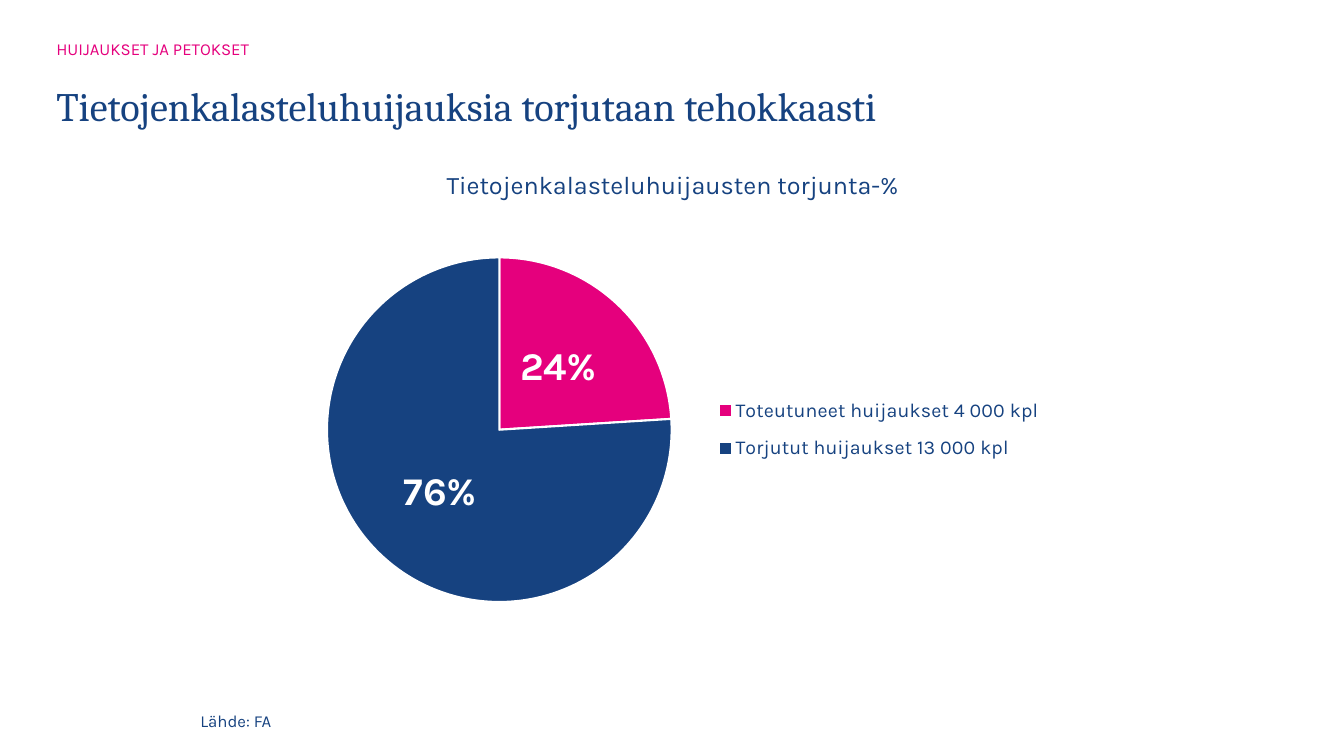
from dataclasses import dataclass
from typing import Any

from lxml.etree import SubElement
from pptx import Presentation
from pptx.chart.data import CategoryChartData
from pptx.dml.color import RGBColor
from pptx.enum.chart import XL_CHART_TYPE, XL_LABEL_POSITION, XL_LEGEND_POSITION
from pptx.enum.text import MSO_ANCHOR, PP_ALIGN
from pptx.oxml import parse_xml
from pptx.oxml.ns import nsdecls, qn
from pptx.util import Pt

COLOURS = {"navy": "164280", "pink": "E5007D", "grey": "575757", "white": "FFFFFF"}
BODY_FONT = "Karla"


@dataclass
class TextItem:
    text: str
    box: tuple[float, float, float, float]  # left, top, width, height
    size: float
    colour: str = "navy"
    font: str = BODY_FONT
    align: Any = PP_ALIGN.LEFT
    anchor: Any = MSO_ANCHOR.TOP
    line_spacing: float = 1.0


@dataclass
class Slice:
    label: str
    share: float
    colour: str


HEADLINE = TextItem("Tietojenkalasteluhuijauksia torjutaan tehokkaasti", (33, 43, 832, 69),
                    28.8, font="Cambria", anchor=MSO_ANCHOR.MIDDLE, line_spacing=0.9)
TOPIC = TextItem("HUIJAUKSET JA PETOKSET", (33, 21, 832, 16), 12, "pink", line_spacing=1.2)
CHART_HEADING = TextItem("Tietojenkalasteluhuijausten torjunta-%", (269.5, 117.5, 422, 29),
                         18, align=PP_ALIGN.CENTER)
SOURCE_NOTE = TextItem("Lähde: FA", (136, 500.5, 71, 29), 12, anchor=MSO_ANCHOR.MIDDLE)
SLICES = [
    Slice("Toteutuneet huijaukset 4 000 kpl", 0.24, "pink"),
    Slice("Torjutut huijaukset 13 000 kpl", 0.76, "navy"),
]


def rgb(name: str) -> RGBColor:
    return RGBColor.from_string(COLOURS[name])


def set_font(font: Any, colour: str, **values: Any) -> None:
    for name, value in values.items():
        setattr(font, name, value)
    font.color.rgb = rgb(colour)


def write_text(holder: Any, item: TextItem) -> None:
    for side, length in zip(("left", "top", "width", "height"), item.box):
        setattr(holder, side, Pt(length))
    frame = holder.text_frame
    frame.word_wrap = True
    frame.vertical_anchor = item.anchor
    paragraph = frame.paragraphs[0]
    formats = {"alignment": item.align, "line_spacing": item.line_spacing, "space_before": Pt(0)}
    for name, value in formats.items():
        setattr(paragraph, name, value)
    run = paragraph.add_run()
    run.text = item.text
    set_font(run.font, item.colour, name=item.font, size=Pt(item.size), bold=False)
    run.font._element.set("cap", "none")


def manual_layout(x: float, y: float, w: float, h: float, inner: bool = False) -> Any:
    """Place a chart part by fractions of the chart area."""
    layout = parse_xml(f"<c:layout {nsdecls('c')}><c:manualLayout/></c:layout>")
    settings = {"layoutTarget": "inner"} if inner else {}
    settings |= {"xMode": "edge", "yMode": "edge", "x": x, "y": y, "w": w, "h": h}
    for tag, value in settings.items():
        SubElement(layout[0], qn(f"c:{tag}")).set("val", str(value))
    return layout


def drop_layout(part: Any) -> None:
    for old in part.findall(qn("c:layout")):
        part.remove(old)


def add_pie(slide: Any, slices: list[Slice]) -> None:
    data = CategoryChartData(number_format="0%")
    data.categories = [s.label for s in slices]
    data.add_series("Series 1", [s.share for s in slices])
    chart = slide.shapes.add_chart(
        XL_CHART_TYPE.PIE, Pt(200), Pt(173), Pt(559.5), Pt(268), data).chart
    chart.has_title = False
    set_font(chart.font, "grey", name=BODY_FONT, size=Pt(10))

    # Slices
    plot = chart.plots[0]
    plot.vary_by_categories = True
    for index, part in enumerate(slices):
        form = plot.series[0].points[index].format
        form.fill.solid()
        form.fill.fore_color.rgb = rgb(part.colour)
        form.line.color.rgb = rgb("white")
        form.line.width = Pt(1.5)

    # Percentages
    labels = plot.series[0].data_labels
    label_formats = {"show_value": True, "show_percentage": False, "number_format": "0%",
                     "number_format_is_linked": False, "position": XL_LABEL_POSITION.CENTER}
    for name, value in label_formats.items():
        setattr(labels, name, value)
    set_font(labels.font, "white", name=BODY_FONT, size=Pt(28), bold=True)

    # Legend
    chart.has_legend = True
    legend = chart.legend
    legend.position = XL_LEGEND_POSITION.RIGHT
    legend.include_in_layout = False
    set_font(legend.font, "navy", name=BODY_FONT, size=Pt(14))

    # Places of the pie and the legend
    legend_part = legend._element
    drop_layout(legend_part)
    legend_part.find(qn("c:legendPos")).addnext(manual_layout(0.55, 0.38, 0.43, 0.24))
    plot_area = chart._chartSpace.chart.plotArea
    drop_layout(plot_area)
    plot_area.insert(0, manual_layout(0.06, 0.04, 0.44, 0.92, inner=True))


def main() -> None:
    deck = Presentation()
    deck.slide_width, deck.slide_height = Pt(960), Pt(540)
    slide = deck.slides.add_slide(deck.slide_layouts.get_by_name("Section Header"))

    # Heading and topic
    write_text(slide.shapes.title, HEADLINE)
    write_text(slide.placeholders[1], TOPIC)

    # Chart with its heading and source
    add_pie(slide, SLICES)
    for item in (CHART_HEADING, SOURCE_NOTE):
        write_text(slide.shapes.add_textbox(*map(Pt, item.box)), item)

    deck.save("out.pptx")


if __name__ == "__main__":
    main()
